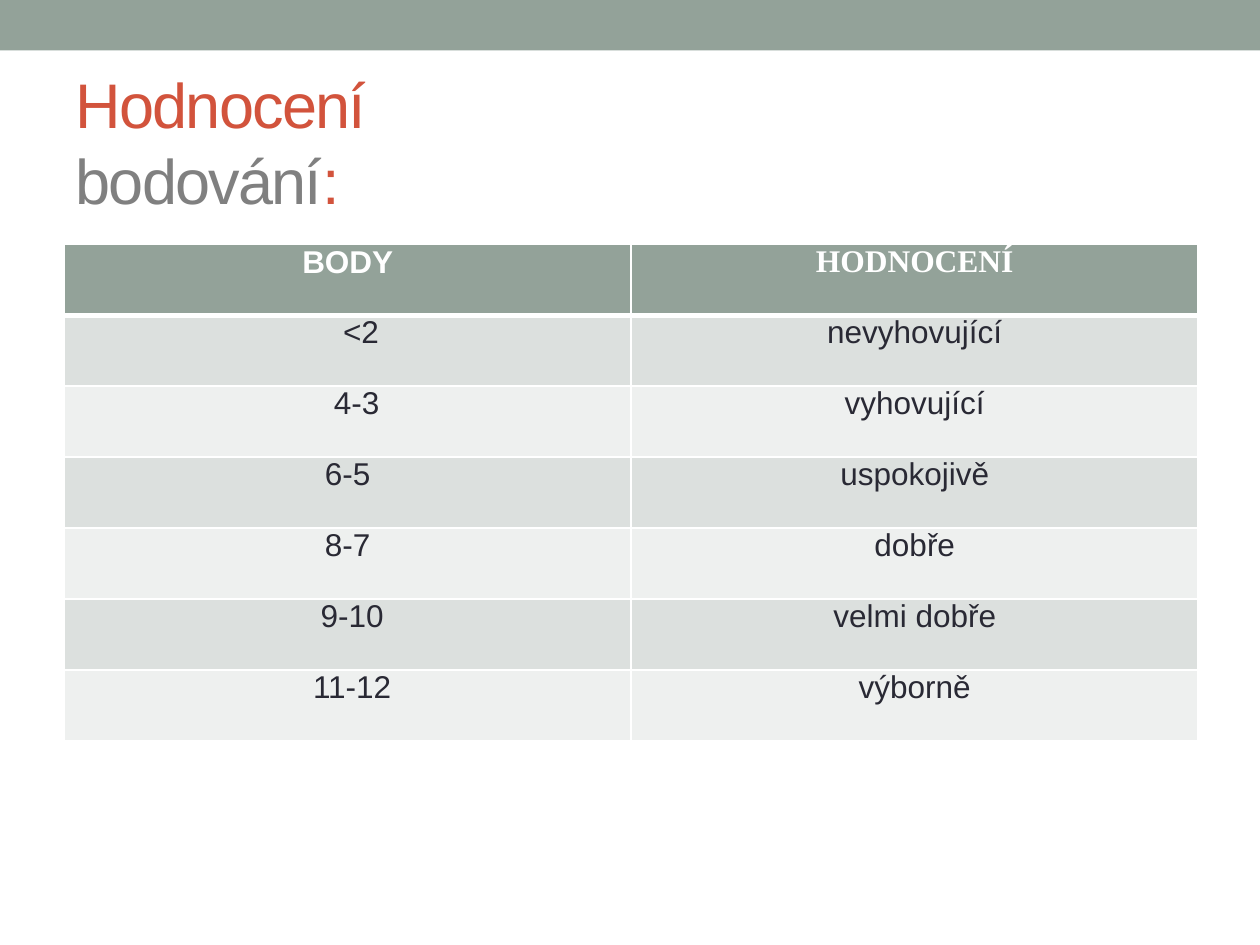
from pptx import Presentation
from pptx.dml.color import RGBColor
from pptx.enum.shapes import MSO_SHAPE as Shape
from pptx.enum.text import MSO_ANCHOR as Anchor, MSO_AUTO_SIZE as AutoSize, PP_ALIGN as Align
from pptx.oxml.ns import qn
from pptx.util import Inches, Pt
from lxml.etree import SubElement

COLORS = {"sage": "93A299", "red": "D2533C", "gray": "808080", "ink": "292934",
          "white": "FFFFFF", "band_dark": "DCE0DE", "band_light": "EEF0EF"}
WIDTH, HEIGHT = Inches(10), Inches(7.5)
MARGIN = 0.07
ROWS = [("BODY", "HODNOCENÍ"), ("<2", "nevyhovující"), ("4-3", "vyhovující"),
        ("6-5", "uspokojivě"), ("8-7", "dobře"), ("9-10", "velmi dobře"),
        ("11-12", "výborně")]
INDENT_STEPS = [0, 3, 2, 0, 0, 1, 1]


def rgb(name):
    """Return the palette colour with the given name."""
    return RGBColor.from_string(COLORS[name])


def add_run(p, text, size, color, font="Arial", bold=False):
    """Append one formatted run to a paragraph."""
    r = p.add_run()
    r.text = text
    r.font.size, r.font.name, r.font.bold = Pt(size), font, bold
    r.font.color.rgb = rgb(color)
    return r


def add_band(s, x, y, w, h):
    """Draw the plain band across the top."""
    sp = s.shapes.add_shape(Shape.RECTANGLE, x, y, w, h)
    sp.shadow.inherit = False
    sp.fill.solid()
    sp.fill.fore_color.rgb = rgb("sage")
    sp.line.fill.background()


def add_title(s, x, y, w, h):
    """Place the two-line title in its placeholder."""
    sp = s.shapes.title
    sp.left, sp.top, sp.width, sp.height = x, y, w, h
    tf = sp.text_frame
    tf.word_wrap, tf.auto_size = True, AutoSize.NONE
    tf.vertical_anchor = Anchor.MIDDLE
    p = tf.paragraphs[0]
    p.alignment = Align.LEFT
    runs = [add_run(p, "Hodnocení", 36, "red")]
    p.add_line_break()
    runs += [add_run(p, "bodování", 36, "gray"), add_run(p, ":", 36, "red")]
    for r in runs:
        r.font._element.set("spc", "-100")


def set_borders(cell, bottom):
    """Give a cell white borders, with its own bottom width in points."""
    props = cell._tc.get_or_add_tcPr()
    for i, (side, width) in enumerate([("L", 1), ("R", 1), ("T", 1), ("B", bottom)]):
        ln = SubElement(props, qn(f"a:ln{side}"), w=str(Pt(width)))
        fill = SubElement(ln, qn("a:solidFill"))
        SubElement(fill, qn("a:srgbClr"), val=COLORS["white"])
        props.insert(i, ln)


def format_cell(cell, text, row, col):
    """Fill one table cell according to its row and column."""
    header = row == 0
    cell.fill.solid()
    cell.fill.fore_color.rgb = rgb(
        "sage" if header else "band_dark" if row % 2 else "band_light")
    set_borders(cell, 3 if header else 1)
    steps = INDENT_STEPS[row] if col == 0 else 0
    cell.margin_left = Inches(MARGIN * (1 + steps))
    cell.margin_right = Inches(MARGIN)
    cell.margin_top = cell.margin_bottom = 0
    cell.vertical_anchor = Anchor.TOP
    p = cell.text_frame.paragraphs[0]
    p.alignment = Align.CENTER
    font = "Times New Roman" if header and col == 1 else "Arial"
    add_run(p, text, 18, "white" if header else "ink", font, header)


def add_score_table(s, x, y, w, h):
    """Build the table of points and grades."""
    table = s.shapes.add_table(len(ROWS), len(ROWS[0]), x, y, w, h).table
    for row, texts in enumerate(ROWS):
        for col, text in enumerate(texts):
            format_cell(table.cell(row, col), text, row, col)


def main():
    """Build and save the slide."""
    prs = Presentation()
    prs.slide_width, prs.slide_height = WIDTH, HEIGHT
    s = prs.slides.add_slide(prs.slide_layouts[5])
    add_band(s, 0, 0, WIDTH, Inches(0.4))
    add_title(s, Inches(0.5), Inches(0.58), int(WIDTH * 0.9), Inches(1.08))
    add_score_table(s, Inches(0.51), Inches(1.94), int(WIDTH * 0.9), Inches(3.94))
    prs.save("out.pptx")


if __name__ == "__main__":
    main()
